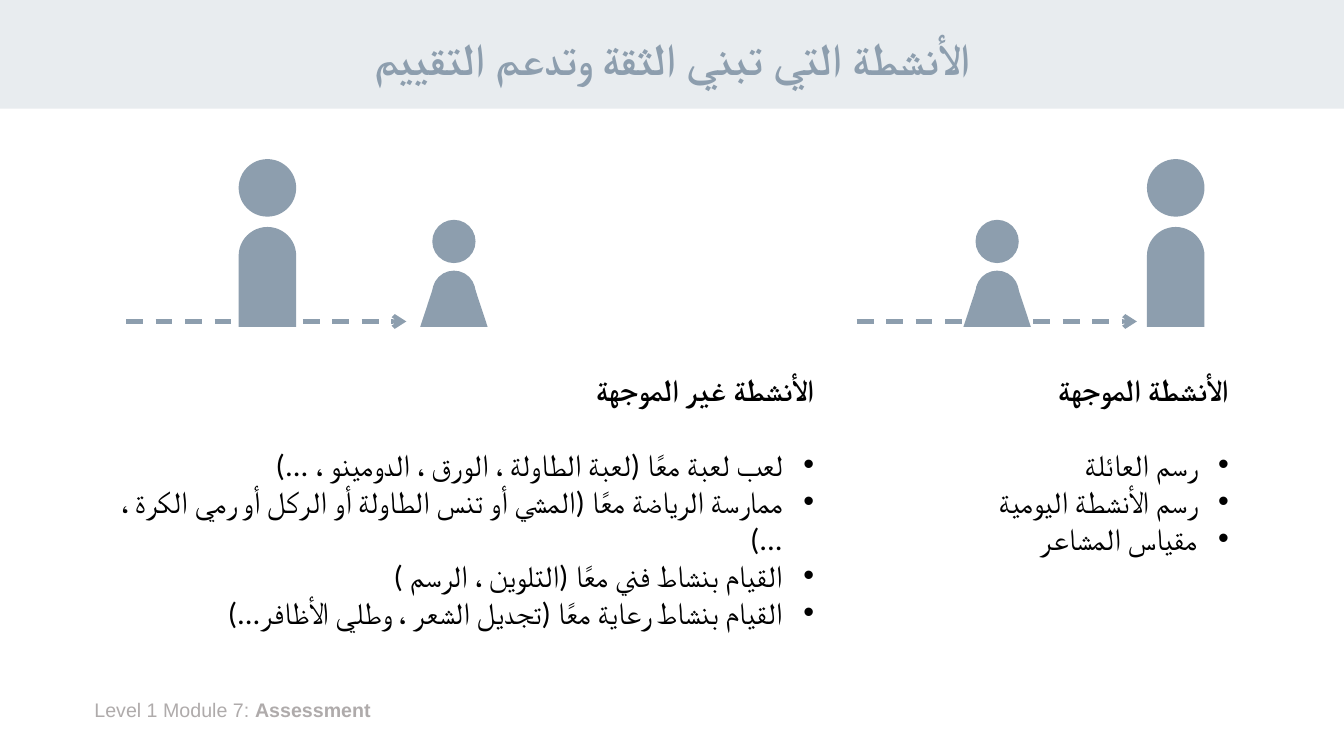
from lxml import etree
from pptx import Presentation
from pptx.dml.color import RGBColor
from pptx.enum.dml import MSO_LINE
from pptx.enum.shapes import MSO_CONNECTOR, MSO_SHAPE
from pptx.enum.text import MSO_ANCHOR, MSO_AUTO_SIZE, PP_ALIGN
from pptx.oxml.ns import qn
from pptx.util import Cm, Pt

SLATE = RGBColor(0x8D, 0x9E, 0xAE)
PALE = RGBColor(0xE8, 0xEC, 0xEF)
GREY = RGBColor(0xAF, 0xAB, 0xAB)
BLACK = RGBColor(0, 0, 0)
RECTANGLE, OVAL = MSO_SHAPE.RECTANGLE, MSO_SHAPE.OVAL
ROUNDED_TOP, TRAPEZOID = MSO_SHAPE.ROUND_2_SAME_RECTANGLE, MSO_SHAPE.TRAPEZOID
STRAIGHT, DASH = MSO_CONNECTOR.STRAIGHT, MSO_LINE.DASH
CENTER, RIGHT = PP_ALIGN.CENTER, PP_ALIGN.RIGHT
TOP, MIDDLE = MSO_ANCHOR.TOP, MSO_ANCHOR.MIDDLE
NO_AUTOFIT = MSO_AUTO_SIZE.NONE

TITLE = "الأنشطة التي تبني الثقة وتدعم التقييم"
FOOTER = [("Level 1 Module 7: ", False), ("Assessment", True)]
# heading, activities, box (left, top, width, height in cm)
ACTIVITY_LISTS = [
    ("الأنشطة غير الموجهة",
     ["لعب لعبة معًا (لعبة الطاولة ، الورق ، الدومينو ، ...)",
      "ممارسة الرياضة معًا (المشي أو تنس الطاولة أو الركل أو رمي الكرة ، ...)",
      "القيام بنشاط فني معًا (التلوين ، الرسم )",
      "القيام بنشاط رعاية معًا (تجديل الشعر ، وطلي الأظافر...)"],
     (2.79, 9.22, 17.98, 6.83)),
    ("الأنشطة الموجهة",
     ["رسم العائلة", "رسم الأنشطة اليومية", "مقياس المشاعر"],
     (22.3, 9.22, 8.92, 4.95)),
]
# Parts of each figure: shape, width, height, bottom above the floor, adjustments
ADULT = [(OVAL, 1.45, 1.45, 2.78, []),
         (ROUNDED_TOP, 1.45, 2.52, 0, [0.5, 0])]
CHILD = [(ROUNDED_TOP, 1.09, 1.42, 0, [0.5, 0]),
         (OVAL, 1.09, 1.09, 1.61, []),
         (TRAPEZOID, 1.7, 0.99, 0, [0.33])]
# Arrow start, then each figure with its centre
SCENES = [(3.18, [(CHILD, 11.44), (ADULT, 6.74)]),
          (21.59, [(CHILD, 25.13), (ADULT, 29.63)])]
FLOOR, ARROW_Y, ARROW_LENGTH = 8.24, 8.1, 7.06
BULLET_INDENT = Cm(0.79)


def place(shape, box):
    shape.left, shape.top, shape.width, shape.height = map(Cm, box)


def paint(shape, color):
    shape.fill.solid()
    shape.fill.fore_color.rgb = color
    shape.line.fill.background()
    shape.shadow.inherit = False


def add_run(paragraph, text, font, size, color, bold):
    run = paragraph.add_run()
    run.text = text
    run.font.name, run.font.size, run.font.bold = font, Pt(size), bold
    run.font.color.rgb = color
    return run


def add_arabic_run(paragraph, text, size, color, bold, align):
    """Add a right-to-left run, with the font set for complex scripts too."""
    paragraph.alignment = align
    paragraph._p.get_or_add_pPr().set("rtl", "1")
    run = add_run(paragraph, text, "Calibri", size, color, bold)
    script = etree.SubElement(run._r.get_or_add_rPr(), qn("a:cs"))
    script.set("typeface", "Calibri")


def set_bullet(paragraph, bulleted):
    properties = paragraph._p.get_or_add_pPr()
    indent = BULLET_INDENT if bulleted else 0
    properties.set("marL", str(indent))
    properties.set("indent", str(-indent))
    if bulleted:
        etree.SubElement(properties, qn("a:buFont")).set("typeface", "Arial")
        etree.SubElement(properties, qn("a:buChar")).set("char", "•")
    else:
        etree.SubElement(properties, qn("a:buNone"))


def fill_activities(body, heading, activities, box):
    place(body, box)
    frame = body.text_frame
    frame.auto_size, frame.vertical_anchor = NO_AUTOFIT, TOP
    for index, text in enumerate([heading] + activities):
        is_heading = index == 0
        paragraph = frame.paragraphs[0] if is_heading else frame.add_paragraph()
        paragraph.line_spacing = 1.0
        paragraph.space_before = Pt(0)
        paragraph.space_after = Pt(27 if is_heading else 0)
        set_bullet(paragraph, not is_heading)
        add_arabic_run(paragraph, text, 22, BLACK, is_heading, RIGHT)


def draw_figure(slide, parts, center):
    figure = slide.shapes.add_group_shape()
    for kind, width, height, lift, adjustments in parts:
        part = figure.shapes.add_shape(
            kind, Cm(center - width / 2), Cm(FLOOR - lift - height),
            Cm(width), Cm(height))
        for index, value in enumerate(adjustments):
            part.adjustments[index] = value
        paint(part, SLATE)


def draw_arrow(slide, start):
    arrow = slide.shapes.add_connector(
        STRAIGHT, Cm(start), Cm(ARROW_Y), Cm(start + ARROW_LENGTH), Cm(ARROW_Y))
    arrow.line.color.rgb = SLATE
    arrow.line.width = Pt(3)
    arrow.line.dash_style = DASH
    etree.SubElement(arrow.line._get_or_add_ln(), qn("a:tailEnd")).set("type", "arrow")
    etree.SubElement(arrow._element.spPr, qn("a:effectLst"))


def main():
    deck = Presentation()
    deck.slide_width, deck.slide_height = Cm(33.87), Cm(19.05)
    slide = deck.slides.add_slide(deck.slide_layouts[3])
    title, *bodies = slide.placeholders

    band = slide.shapes.add_shape(RECTANGLE, 0, 0, deck.slide_width, Cm(2.74))
    paint(band, PALE)
    title._element.addprevious(band._element)

    place(title, (2.34, 0.33, 29.21, 2.41))
    title.text_frame.auto_size = NO_AUTOFIT
    title.text_frame.vertical_anchor = MIDDLE
    headline = title.text_frame.paragraphs[0]
    headline.line_spacing = 0.9
    add_arabic_run(headline, TITLE, 32, SLATE, True, CENTER)

    footer = slide.shapes.add_textbox(Cm(2.13), Cm(17.45), Cm(28.83), Cm(0.86))
    footer.text_frame.word_wrap = True
    for text, bold in FOOTER:
        add_run(footer.text_frame.paragraphs[0], text, "Arial", 14, GREY, bold)

    for body, activity_list in zip(bodies, ACTIVITY_LISTS):
        fill_activities(body, *activity_list)

    for arrow_start, figures in SCENES:
        for parts, center in figures:
            draw_figure(slide, parts, center)
        draw_arrow(slide, arrow_start)

    deck.save("out.pptx")


if __name__ == "__main__":
    main()
